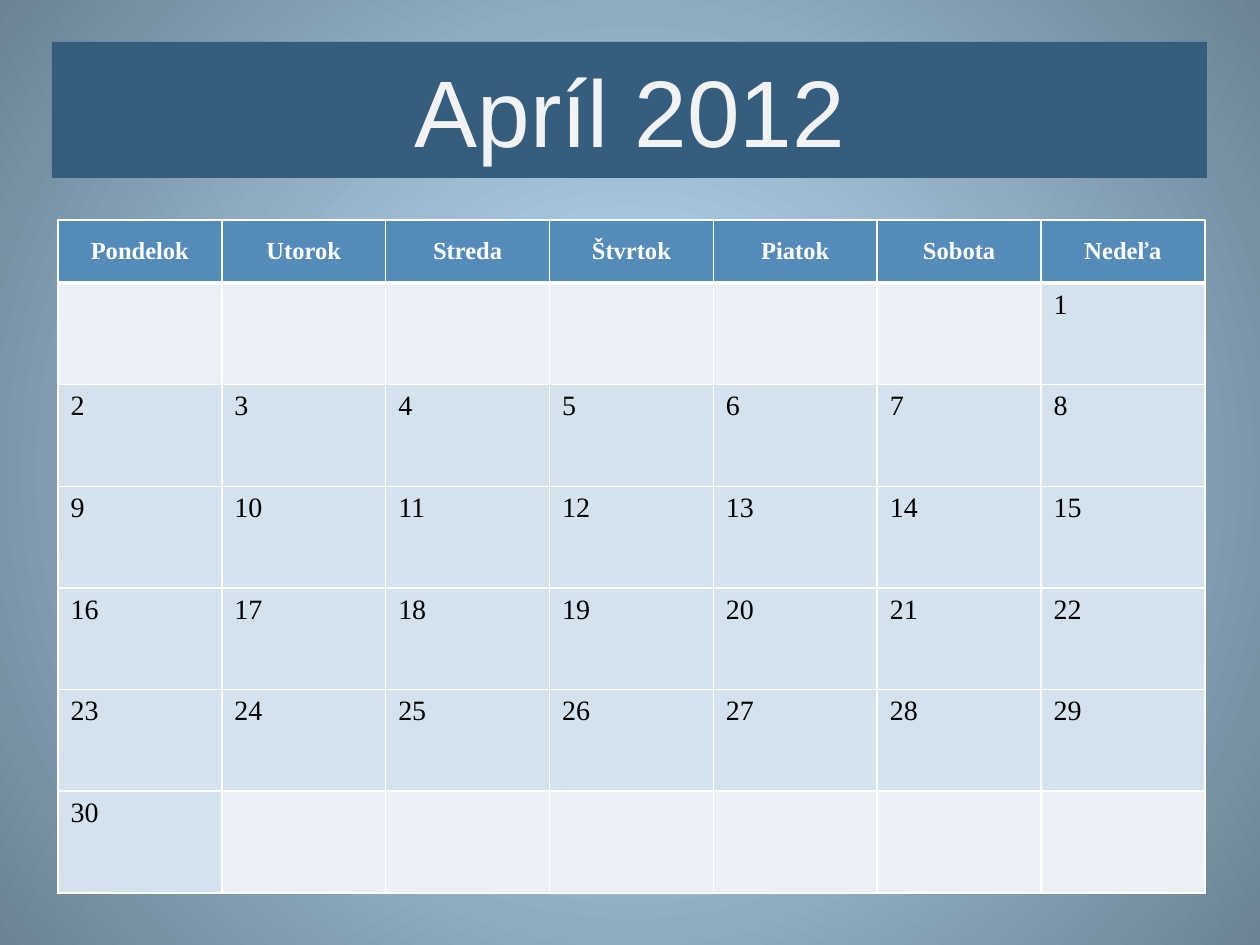
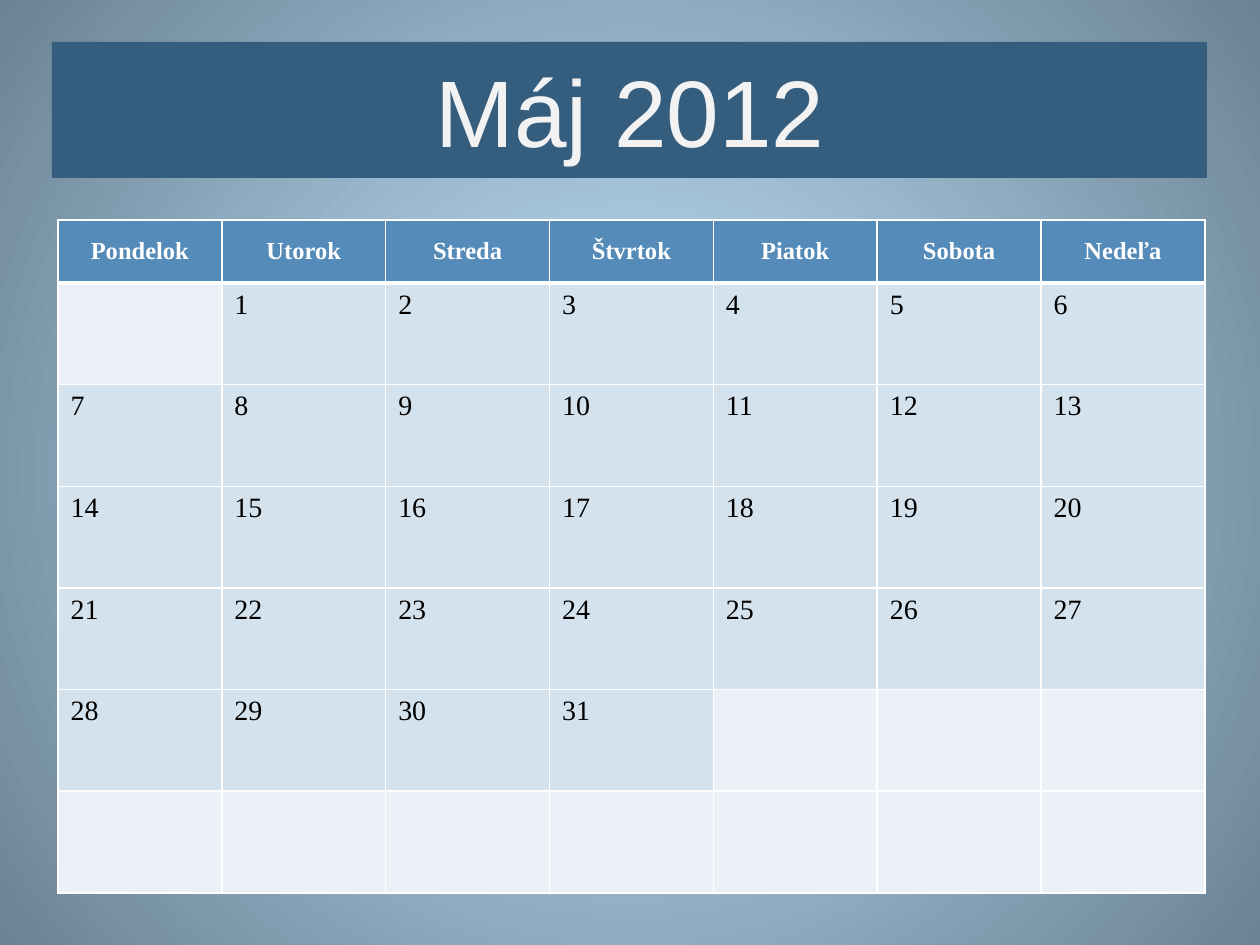
from lxml.etree import SubElement
from pptx import Presentation
from pptx.dml.color import RGBColor
from pptx.enum.shapes import MSO_SHAPE
from pptx.enum.text import MSO_ANCHOR, PP_ALIGN
from pptx.oxml import parse_xml
from pptx.oxml.ns import nsdecls, qn
from pptx.util import Pt

EMU_PER_PX = 914400 / 126
COLORS = {
    "glow": "C1E5FF",
    "edge": "6B8394",
    "band": "355D7E",
    "title": "F2F2F2",
    "header": "558BB8",
    "day": "D4E2ED",
    "blank": "EAF0F6",
    "white": "FFFFFF",
    "black": "000000",
}
WEEKDAYS = ["Pondelok", "Utorok", "Streda", "Štvrtok", "Piatok", "Sobota", "Nedeľa"]
WEEKS = 6
MONTHS = [("Apríl 2012", 6, 30), ("Máj 2012", 1, 31)]


def px(n):
    return round(n * EMU_PER_PX)


def rgb(name):
    return RGBColor.from_string(COLORS[name])


def write(tf, text, size, color, font="Times New Roman", bold=False,
          align=PP_ALIGN.LEFT):
    p = tf.paragraphs[0]
    p.alignment = align
    r = p.add_run()
    r.text = text
    r.font.name = font
    r.font.size = Pt(size)
    r.font.bold = bold
    r.font.color.rgb = rgb(color)


def set_background(master):
    fill = master.background.fill
    fill.gradient()
    for stop, position, color in zip(fill.gradient_stops, (0, 1), ("glow", "edge")):
        stop.position = position
        stop.color.rgb = rgb(color)
    grad = master.element.find(".//" + qn("p:bgPr") + "/" + qn("a:gradFill"))
    grad.replace(grad.find(qn("a:lin")), parse_xml(
        f'<a:path {nsdecls("a")} path="circle">'
        '<a:fillToRect l="50000" t="50000" r="50000" b="50000"/></a:path>'))


def set_borders(cell, **widths):
    tc_pr = cell._tc.get_or_add_tcPr()
    for i, side in enumerate("LRTB"):
        ln = parse_xml(
            f'<a:ln{side} {nsdecls("a")} w="{Pt(widths.get(side, 1))}"/>')
        color = SubElement(SubElement(ln, qn("a:solidFill")), qn("a:srgbClr"))
        color.set("val", COLORS["white"])
        tc_pr.insert(i, ln)


def fill_cell(cell, color, **borders):
    cell.fill.solid()
    cell.fill.fore_color.rgb = rgb(color)
    set_borders(cell, **borders)


def add_calendar(s, first_column, days):
    columns = len(WEEKDAYS)
    table = s.shapes.add_table(WEEKS + 1, columns, px(58), px(220),
                               px(1147), px(673)).table
    for column in table.columns:
        column.width = px(1147) // columns
    for i, row in enumerate(table.rows):
        row.height = px(610) // WEEKS if i else px(63)

    for col, weekday in enumerate(WEEKDAYS):
        cell = table.cell(0, col)
        fill_cell(cell, "header", B=3)
        cell.vertical_anchor = MSO_ANCHOR.MIDDLE
        write(cell.text_frame, weekday, 14, "white", bold=True,
              align=PP_ALIGN.CENTER)

    for i in range(WEEKS * columns):
        week, col = divmod(i, columns)
        cell = table.cell(week + 1, col)
        day = i - first_column + 1
        in_month = 1 <= day <= days
        fill_cell(cell, "day" if in_month else "blank", T=1 if week else 3)
        if in_month:
            write(cell.text_frame, str(day), 16, "black")


def add_band(s):
    band = s.shapes.add_shape(MSO_SHAPE.RECTANGLE, px(52), px(42), px(1155), px(136))
    band.shadow.inherit = False
    band.fill.solid()
    band.fill.fore_color.rgb = rgb("band")
    band.line.fill.background()


def set_title(s, text):
    title = s.shapes.title
    title.left, title.top, title.width, title.height = px(63), px(42), px(1134), px(136)
    tf = title.text_frame
    tf.word_wrap = True
    tf.vertical_anchor = MSO_ANCHOR.MIDDLE
    write(tf, text, 54, "title", font="Arial", align=PP_ALIGN.CENTER)
    s.shapes._spTree.append(title.element)


def main():
    prs = Presentation()
    prs.slide_width, prs.slide_height = px(1260), px(945)
    set_background(prs.slide_master)
    for name, first_column, days in MONTHS:
        s = prs.slides.add_slide(prs.slide_layouts[5])
        add_calendar(s, first_column, days)
        add_band(s)
        set_title(s, name)
    prs.save("out.pptx")


if __name__ == "__main__":
    main()
